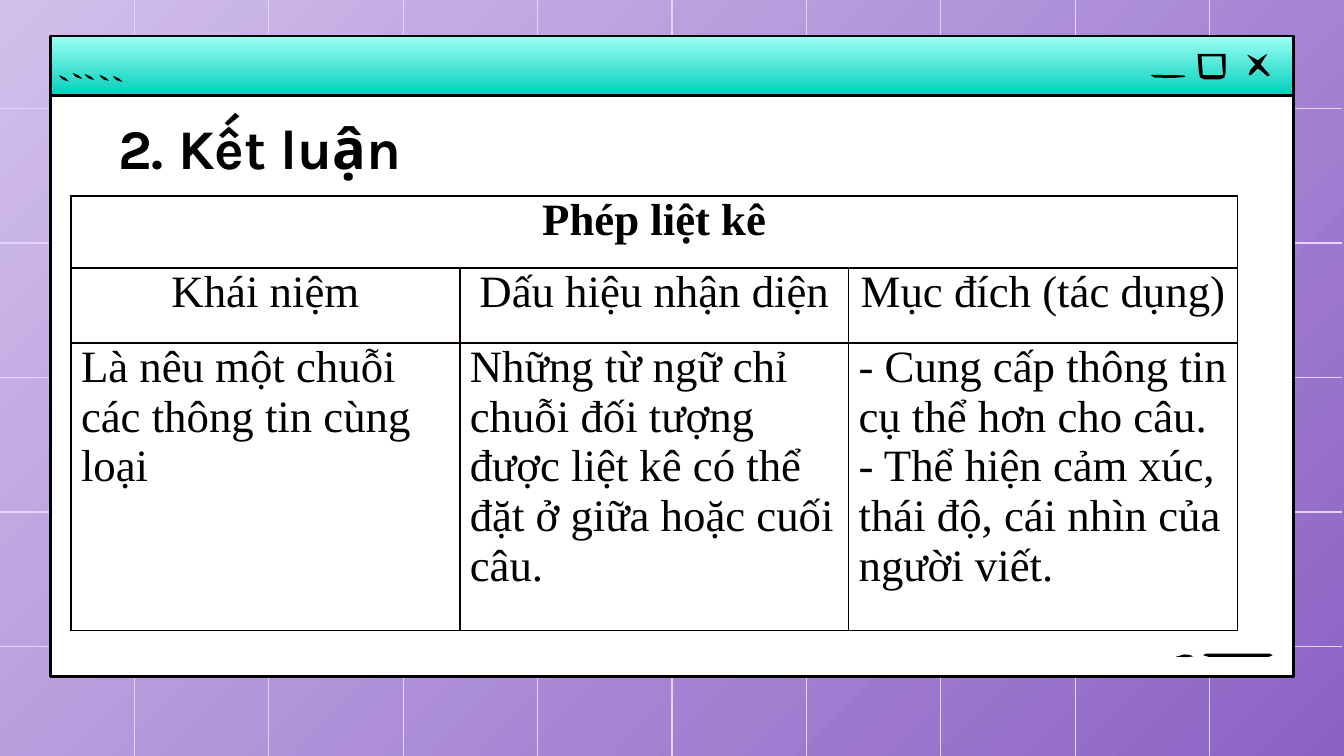
from lxml import etree
from pptx import Presentation
from pptx import util as u
from pptx.dml.color import RGBColor
from pptx.enum import shapes, text
from pptx.oxml import ns

Pt = u.Pt
BLACK = RGBColor(0x00, 0x00, 0x00)
WHITE = RGBColor(0xFF, 0xFF, 0xFF)
GRID = RGBColor(0xE7, 0xD3, 0xFF)
LILAC = RGBColor(0xD2, 0xBF, 0xEB)
PURPLE = RGBColor(0x8C, 0x63, 0xC5)
MINT = RGBColor(0x9D, 0xFF, 0xF5)
TEAL = RGBColor(0x00, 0xCF, 0xBA)
BORDER = RGBColor(0x08, 0x00, 0x00)

WIDTH, HEIGHT, STEP = 720, 405, 72
TITLE_FONT = {"name": "Karla", "size": Pt(30), "bold": True}
HEAD_FONT = {"name": "Times New Roman", "size": Pt(24), "bold": True}
BODY_FONT = {**HEAD_FONT, "bold": False}
CENTER, LEFT = text.PP_ALIGN.CENTER, text.PP_ALIGN.LEFT


def set_all(target, values):
    for name, value in values.items():
        setattr(target, name, value)


class SlideBuilder:
    """Holds the slide and the style of its elements."""

    def __init__(self, slide):
        self.slide = slide
        self.shapes = slide.shapes

    def gradient(self, fill, start, end, angle):
        fill.gradient()
        fill.gradient_angle = angle
        for stop, color in zip(fill.gradient_stops, (start, end)):
            stop.color.rgb = color

    def grid_line(self, x1, y1, x2, y2):
        line = self.shapes.add_connector(
            shapes.MSO_CONNECTOR.STRAIGHT, Pt(x1), Pt(y1), Pt(x2), Pt(y2))
        line.line.color.rgb = GRID
        line.line.width = Pt(0.75)
        etree.SubElement(line._element.spPr, ns.qn("a:effectLst"))

    def panel(self, x, y, width, height):
        shape = self.shapes.add_shape(
            shapes.MSO_SHAPE.RECTANGLE, Pt(x), Pt(y), Pt(width), Pt(height))
        shape.shadow.inherit = False
        shape.line.color.rgb = BLACK
        shape.line.width = Pt(1.5)
        return shape

    def ink(self, *contours, x=0, y=0):
        """Draw one black outline from closed contours, shifted by x and y."""
        builder = None
        for contour in contours:
            first, *rest = [(Pt(x + px), Pt(y + py)) for px, py in contour]
            if builder is None:
                builder = self.shapes.build_freeform(*first, scale=1.0)
            else:
                builder.move_to(*first)
            builder.add_line_segments(rest, close=True)
        shape = builder.convert_to_shape()
        shape.shadow.inherit = False
        shape.fill.solid()
        shape.fill.fore_color.rgb = BLACK
        shape.line.fill.background()

    def add_lines(self, frame, lines, font, alignment=LEFT):
        for index, line in enumerate(lines):
            paragraph = frame.add_paragraph() if index else frame.paragraphs[0]
            paragraph.alignment = alignment
            run = paragraph.add_run()
            run.text = line
            set_all(run.font, font)
            run.font.color.rgb = BLACK

    def title(self, words, x, y, width, height):
        frame = self.shapes.add_textbox(Pt(x), Pt(y), Pt(width), Pt(height)).text_frame
        margins = dict.fromkeys(
            ("margin_left", "margin_right", "margin_top", "margin_bottom"), Pt(7.2))
        set_all(frame, {"word_wrap": True,
                        "vertical_anchor": text.MSO_ANCHOR.MIDDLE, **margins})
        self.add_lines(frame, [words], TITLE_FONT)

    def borders(self, cell):
        properties = cell._tc.get_or_add_tcPr()
        for index, side in enumerate(("lnL", "lnR", "lnT", "lnB")):
            line = etree.Element(ns.qn(f"a:{side}"), w=str(Pt(1)))
            fill = etree.SubElement(line, ns.qn("a:solidFill"))
            etree.SubElement(fill, ns.qn("a:srgbClr"), val=str(BORDER))
            properties.insert(index, line)

    def table(self, rows, x, y, column_width, row_heights):
        count = len(rows[-1])
        table = self.shapes.add_table(
            len(rows), count, Pt(x), Pt(y),
            Pt(column_width * count), Pt(sum(row_heights))).table
        set_all(table, {"first_row": False, "horz_banding": False})
        for column in table.columns:
            column.width = Pt(column_width)
        for row, height in zip(table.rows, row_heights):
            row.height = Pt(height)
        for cell in table.iter_cells():
            set_all(cell, {"margin_left": Pt(5.4), "margin_right": Pt(5.4),
                           "margin_top": 0, "margin_bottom": 0})
            cell.fill.background()
            self.borders(cell)
        table.cell(0, 0).merge(table.cell(0, count - 1))
        for r, row in enumerate(rows):
            font = BODY_FONT if r else HEAD_FONT
            alignment = LEFT if r == len(rows) - 1 else CENTER
            for c, lines in enumerate(row):
                self.add_lines(table.cell(r, c).text_frame, lines, font, alignment)


def main():
    presentation = Presentation()
    presentation.slide_width, presentation.slide_height = Pt(WIDTH), Pt(HEIGHT)
    slide = presentation.slides.add_slide(presentation.slide_layouts[6])
    builder = SlideBuilder(slide)

    # Background with its grid
    builder.gradient(slide.background.fill, LILAC, PURPLE, 315)
    for x in range(STEP, WIDTH, STEP):
        builder.grid_line(x, 0, x, HEIGHT)
    for row in range(5):
        y = 58.2 + row * STEP
        builder.grid_line(719, y, 0, y)

    # Title bar of the window
    bar = builder.panel(27, 19.3, 666, 32)
    builder.gradient(bar.fill, MINT, TEAL, 270)

    # Window buttons: maximize, close, minimize
    builder.ink(
        [(654.5, 30.2), (655.2, 40.3), (644.4, 40.3), (643.7, 30.2)],
        [(641.6, 28.8), (642.2, 38.2), (642.9, 41.5), (645.1, 42.5), (653.8, 42.5),
         (655.9, 41.6), (656.6, 38.9), (656.6, 31.7), (656.6, 28.8)])
    builder.ink([(679, 28.8), (676.2, 30.6), (673.9, 32.4), (671.5, 31), (668.9, 29.5),
                 (668.2, 29.5), (672.5, 34.6), (669.8, 37.6), (668.9, 40.3),
                 (670.3, 40.2), (673.9, 36.7), (676.4, 38.6), (679, 41),
                 (680.4, 40.3), (675.4, 34.6), (677.2, 31.5)])
    builder.ink([(616.5, 40.3), (618.5, 41.6), (628.6, 41.8), (635, 41.2),
                 (634.3, 40.4), (617.8, 40.1)])

    # Small ticks
    tick = [(0, 0), (1, 1.6), (2.6, 2.7), (5.2, 3.3), (3.2, 1.4)]
    for x, y in ((31.7, 40.3), (38.9, 39), (45.4, 39.6), (53.3, 40.1), (60.5, 40.6)):
        builder.ink(tick, x=x, y=y)

    # Window body with its corner strokes
    body = builder.panel(27, 51.3, 666, 311)
    body.fill.solid()
    body.fill.fore_color.rgb = WHITE
    builder.ink([(645.8, 350.2), (644.6, 351.1), (647.3, 351.9), (679.7, 351.9),
                 (681.7, 351.2), (680.4, 350.2)])
    builder.ink([(634.3, 350.6), (630, 351.9), (635.8, 352.1), (639.4, 351.6),
                 (636.8, 350.8)])

    # Title and table
    builder.title("2. Kết luận", 56.2, 52.6, 607, 52.6)
    builder.table([
        [["Phép liệt kê"]],
        [["Khái niệm"], ["Dấu hiệu nhận diện"], ["Mục đích (tác dụng)"]],
        [["Là nêu một chuỗi các thông tin cùng loại"],
         ["Những từ ngữ chỉ chuỗi đối tượng được liệt kê có thể đặt ở giữa "
          "hoặc cuối câu."],
         ["- Cung cấp thông tin cụ thể hơn cho câu.",
          "- Thể hiện cảm xúc, thái độ, cái nhìn của người viết."]],
    ], 38, 105, 208.3, (38.6, 40.2, 154))

    presentation.save("out.pptx")


if __name__ == "__main__":
    main()
